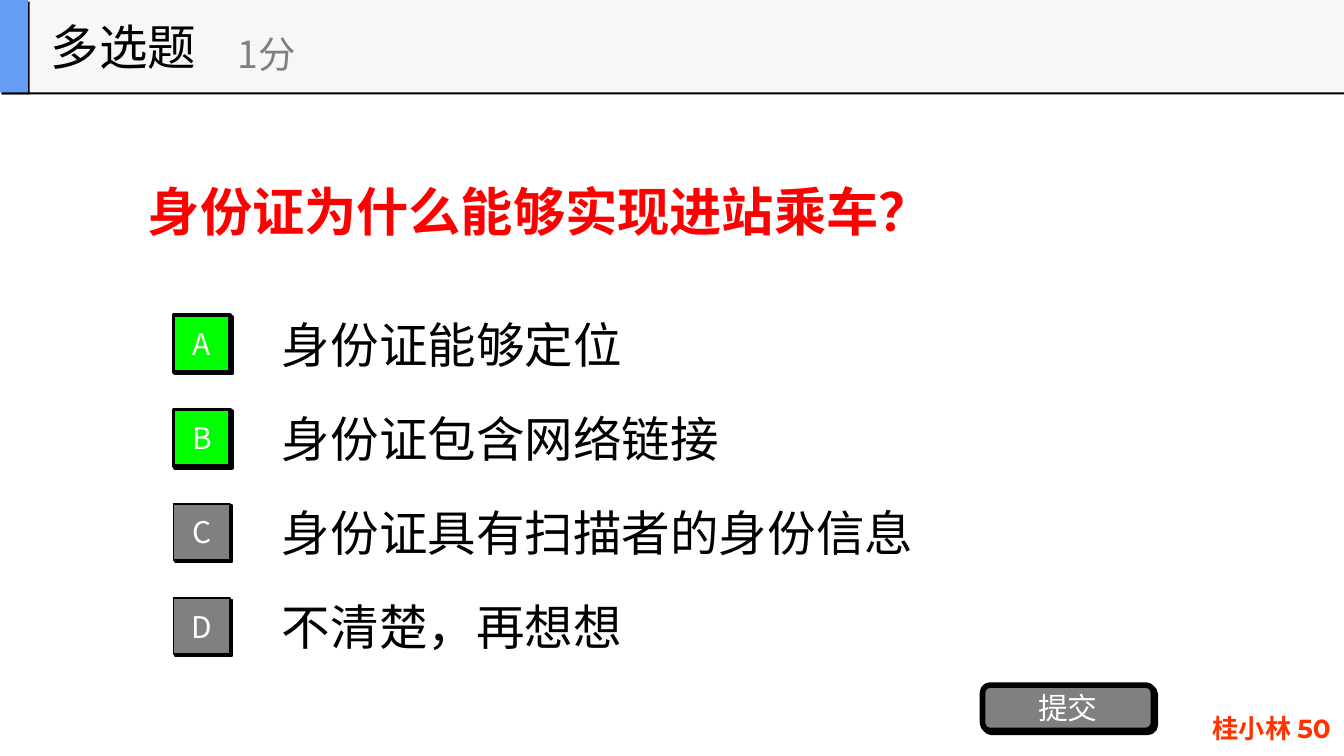
import pptx
import pptx.util
import pptx.dml.color
import pptx.enum.shapes
import pptx.enum.text
import pptx.oxml
import pptx.oxml.ns

Cm, Pt = pptx.util.Cm, pptx.util.Pt
SHAPE = pptx.enum.shapes.MSO_SHAPE
ALIGN = pptx.enum.text.PP_ALIGN
ANCHOR = pptx.enum.text.MSO_ANCHOR

QUESTION = "身份证为什么能够实现进站乘车？"
OPTIONS = [
    ("A", "身份证能够定位", True),
    ("B", "身份证包含网络链接", True),
    ("C", "身份证具有扫描者的身份信息", False),
    ("D", "不清楚，再想想", False),
]
HEADING, SCORE, SUBMIT, FOOTER = "多选题", "1分", "提交", "桂小林 50"

COLORS = {
    "black": "000000", "white": "FFFFFF", "gray": "808080", "chosen": "00FF00",
    "red": "FF0000", "footer": "FF3300", "bar": "F6F7F8", "accent": "639EF4",
}
SANS = "Noto Sans CJK SC"
WIDTH, HEIGHT = 25.4, 14.29
BAR_H = 1.75
ROW_TOP, ROW_H, ROW_PITCH = 5.82, 1.35, 1.78
BADGE = 1.07


def rgb(name):
    return pptx.dml.color.RGBColor.from_string(COLORS[name])


def lengths(box):
    return [Cm(v) for v in box]


def write(s, text, size, color, font=SANS, bold=False, align=ALIGN.LEFT, anchor=ANCHOR.MIDDLE):
    tf = s.text_frame
    tf.word_wrap = True
    tf.vertical_anchor = anchor
    p = tf.paragraphs[0]
    p.alignment = align
    r = p.add_run()
    r.text = text
    r.font.name, r.font.size, r.font.bold = font, Pt(size), bold
    r.font.color.rgb = rgb(color)
    ea = pptx.oxml.parse_xml(
        f'<a:ea {pptx.oxml.ns.nsdecls("a")} typeface="{SANS}"/>')
    r.font._element.find(pptx.oxml.ns.qn("a:latin")).addnext(ea)


def add_text(shapes, box, text, size, color, **style):
    s = shapes.add_textbox(*lengths(box))
    write(s, text, size, color, **style)


def add_block(shapes, kind, box, fill, line=0):
    s = shapes.add_shape(kind, *lengths(box))
    s.fill.solid()
    s.fill.fore_color.rgb = rgb(fill)
    if line:
        s.line.color.rgb = rgb("black")
        s.line.width = Pt(line)
    else:
        s.line.fill.background()
    s._element.spPr.append(pptx.oxml.parse_xml(
        f'<a:effectLst {pptx.oxml.ns.nsdecls("a")}>'
        f'<a:outerShdw dist="{Pt(1.4)}" dir="2700000" algn="ctr" rotWithShape="0">'
        f'<a:srgbClr val="{COLORS["black"]}"/></a:outerShdw></a:effectLst>'))
    return s


def add_button(shapes, kind, box, text, fill, line):
    s = add_block(shapes, kind, box, fill, line)
    tf = s.text_frame
    tf.margin_left = tf.margin_right = tf.margin_top = tf.margin_bottom = 0
    write(s, text, 16, "white", align=ALIGN.CENTER)


prs = pptx.Presentation()
prs.slide_width, prs.slide_height = Cm(WIDTH), Cm(HEIGHT)
slide = prs.slides.add_slide(prs.slide_layouts[5])
shapes = slide.shapes

title = shapes.title
title.left, title.top, title.width, title.height = lengths((2.54, BAR_H, 20.32, 4.47))
write(title, QUESTION, 28, "red", font="Times New Roman", bold=True)

add_text(shapes, (17.91, 13.34, 7.49, 0.95), FOOTER, 14, "footer",
         font="Montserrat", bold=True, align=ALIGN.RIGHT, anchor=ANCHOR.TOP)

for i, (letter, answer, chosen) in enumerate(OPTIONS):
    top = ROW_TOP + i * ROW_PITCH
    add_text(shapes, (5.08, top, 17.78, ROW_H), answer, 26, "black")
    add_button(shapes, SHAPE.RECTANGLE, (3.28, top + (ROW_H - BADGE) / 2, BADGE, BADGE),
               letter, "chosen" if chosen else "gray", 2 if chosen else 1)

add_button(shapes, SHAPE.ROUNDED_RECTANGLE, (18.57, 12.95, 3.23, 0.86), SUBMIT, "gray", 3)

header = shapes.add_group_shape().shapes
add_block(header, SHAPE.RECTANGLE, (0, 0, WIDTH, BAR_H), "bar")
add_block(header, SHAPE.RECTANGLE, (0, 0, 0.53, BAR_H), "accent")
add_text(header, (0.71, 0, 5.28, BAR_H), HEADING, 26, "black")
add_text(header, (4.24, 0.3, 6.35, 1.42), SCORE, 20, "gray")

prs.save("out.pptx")
